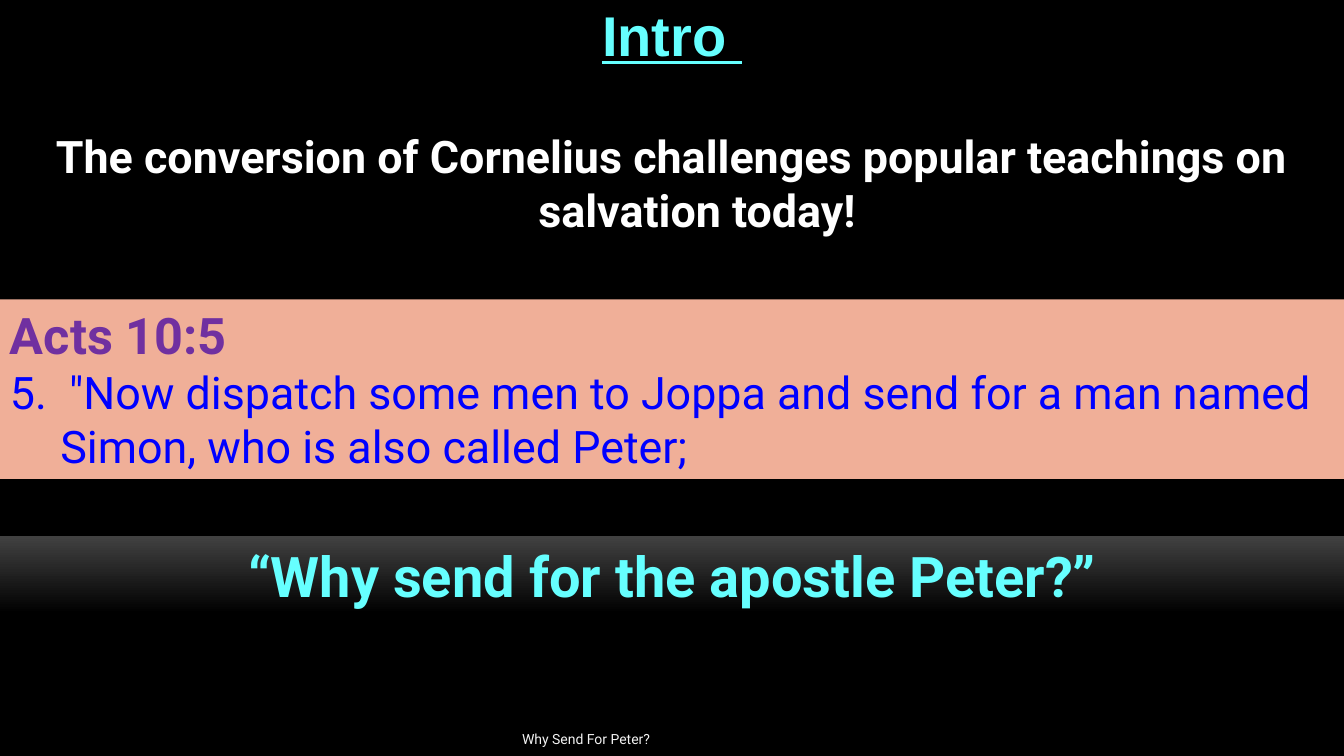
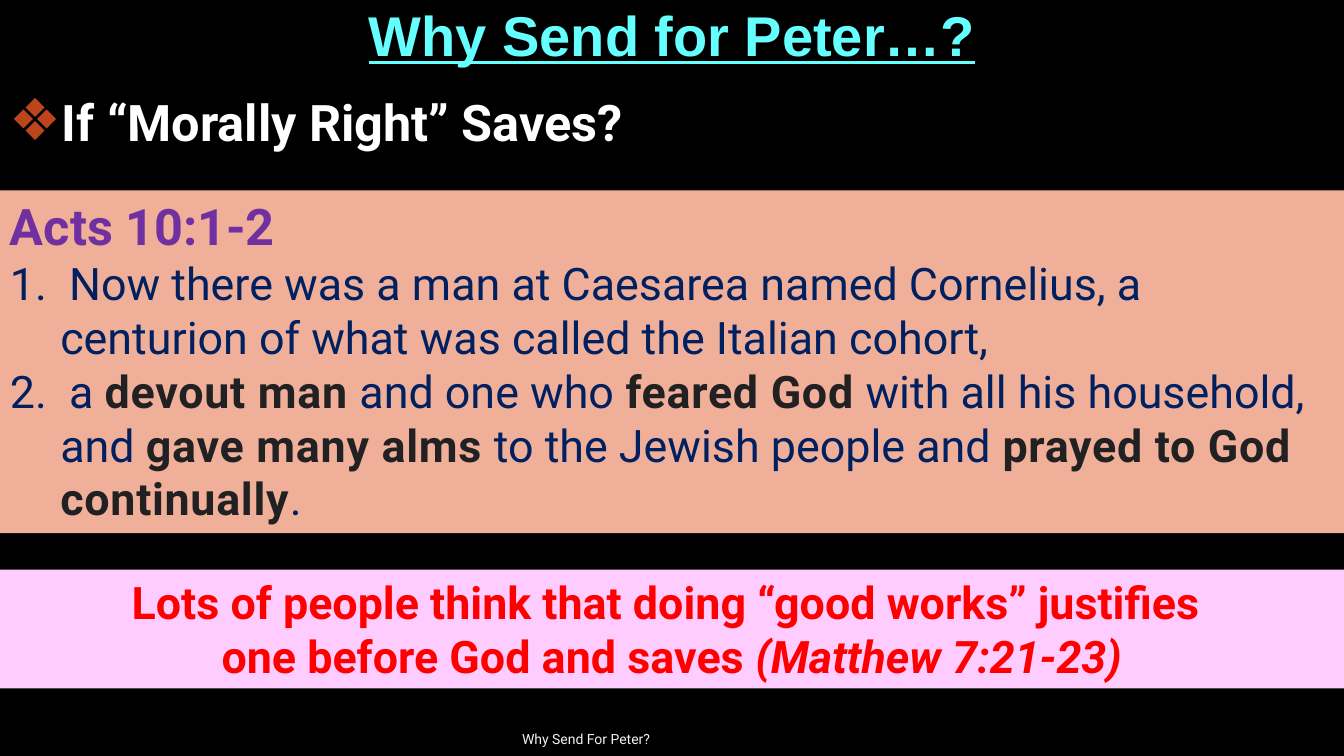
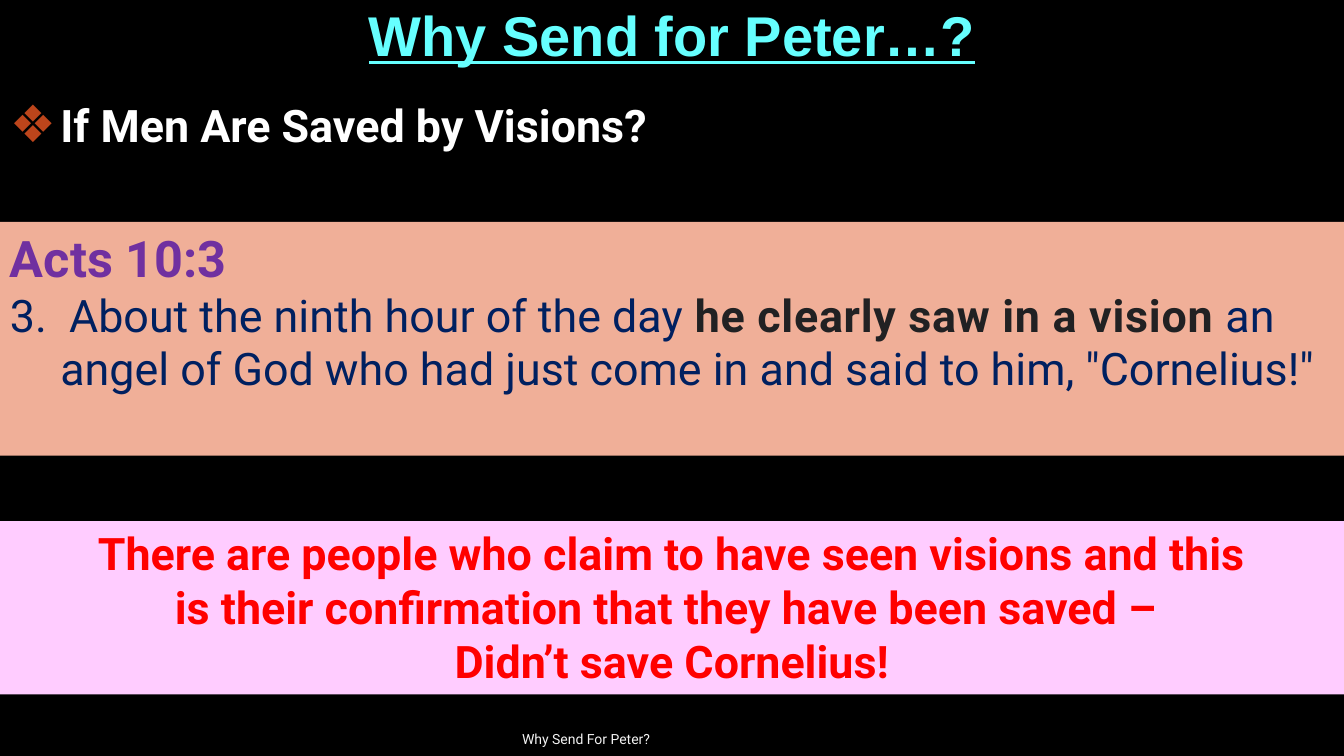
from lxml import etree
from pptx import Presentation
from pptx.dml.color import RGBColor
from pptx.enum.shapes import MSO_SHAPE
from pptx.enum.text import MSO_ANCHOR, PP_ALIGN
from pptx.oxml.ns import qn
from pptx.util import Inches, Pt

RECT = MSO_SHAPE.RECTANGLE
LEFT, CENTER = PP_ALIGN.LEFT, PP_ALIGN.CENTER
TOP, MIDDLE = MSO_ANCHOR.TOP, MSO_ANCHOR.MIDDLE

# Shared look
WIDTH, HEIGHT = 13.33, 7.5
HANG = 0.5
BLACK, WHITE, CYAN = "000000", "FFFFFF", "66FFFF"
GREY, SMOKE = "414141", "F2F2F2"
PEACH, PINK = "F0AF98", "FFCCFF"
PURPLE, BLUE, NAVY = "7030A0", "0000FF", "002060"
INK, RED, RUST = "212123", "FF0000", "BC451B"
TITLE = {"size": 40, "color": CYAN, "font": "Arial", "line": True}
FOOT = {"size": 10, "color": SMOKE, "bold": False}
POINT = {"size": 32, "color": WHITE}
BIG = {"size": 36, "color": WHITE}
ASK = {"size": 40, "color": CYAN}
CLAIM = {"size": 32, "color": RED}
CITE = {"size": 32, "color": RED, "slant": True}
HEAD = {"size": 36, "color": PURPLE}
QUOTE = {"size": 32, "color": BLUE, "bold": False}
VERSE = {"size": 32, "color": NAVY, "bold": False}
STRESS = {"size": 32, "color": INK, "gap": 0.5}


def rgb(code):
    return RGBColor.from_string(code)


# Text
def add_run(para, text, size, color, font="Roboto", bold=True,
            slant=False, line=False, gap=0):
    run = para.add_run()
    run.text = text
    face = run.font
    face.name, face.size = font, Pt(size)
    face.bold, face.italic, face.underline = bold, slant, line
    face.color.rgb = rgb(color)
    if gap:
        run._r.get_or_add_rPr().set("spc", str(int(gap * 100)))


def hang(para, mark=None):
    props = para._p.get_or_add_pPr()
    props.set("marL", str(Inches(HANG)))
    props.set("indent", str(-Inches(HANG)))
    if mark:
        tint = etree.SubElement(props, qn("a:buClr"))
        etree.SubElement(tint, qn("a:srgbClr"), val=RUST)
        etree.SubElement(props, qn("a:buSzPct"), val="115000")
        etree.SubElement(props, qn("a:buFont"), typeface="Arial")
        etree.SubElement(props, qn("a:buChar"), char=mark)


def write(shape, paras, align=LEFT, anchor=TOP, inset=True, mark=None):
    """Each paragraph is a list of (text, style) pairs."""
    frame = shape.text_frame
    frame.word_wrap = True
    frame.vertical_anchor = anchor
    for num, parts in enumerate(paras):
        para = frame.add_paragraph() if num else frame.paragraphs[0]
        para.alignment = align
        if inset:
            hang(para, mark)
        for text, style in parts:
            add_run(para, text, **style)


# Elements
def add_text(slide, left, top, width, height, paras, **opts):
    box = slide.shapes.add_textbox(*map(Inches, (left, top, width, height)))
    write(box, paras, **opts)


def add_band(slide, top, height, paras, color, fade=None, align=LEFT):
    band = slide.shapes.add_shape(
        RECT, 0, Inches(top), Inches(WIDTH), Inches(height))
    band.shadow.inherit = False
    band.line.fill.background()
    if fade:
        band.fill.gradient()
        band.fill.gradient_angle = 270
        for stop, code, pos in zip(band.fill.gradient_stops,
                                   (color, fade), (0, 1)):
            stop.color.rgb = rgb(code)
            stop.position = pos
    else:
        band.fill.solid()
        band.fill.fore_color.rgb = rgb(color)
    write(band, paras, align=align)


def add_verse(slide, top, height, ref, *verses):
    add_band(slide, top, height, [[(ref, HEAD)], *verses], PEACH)


def add_claim(slide, top, height, *lines):
    add_band(slide, top, height, lines, PINK, align=CENTER)


def add_point(slide, top, height, text, style):
    add_text(slide, 0, top, WIDTH, height, [[(text, style)]], mark="❖")


def add_page(deck, title):
    slide = deck.slides.add_slide(deck.slide_layouts[6])
    slide.background.fill.solid()
    slide.background.fill.fore_color.rgb = rgb(BLACK)
    add_text(slide, 0, 0, WIDTH, 0.67, [[(title, TITLE)]],
             align=CENTER, anchor=MIDDLE, inset=False)
    add_text(slide, 5.08, 7.17, 3.17, 0.33, [[("Why Send For Peter?", FOOT)]],
             anchor=MIDDLE, inset=False)
    return slide


# Slides
def add_intro(deck):
    slide = add_page(deck, "Intro ")
    add_text(slide, 0, 1.23, WIDTH, 1.18, [[(
        "The conversion of Cornelius challenges popular teachings on "
        "salvation today!", POINT)]], align=CENTER)
    add_band(slide, 5.32, 0.77, [[("“Why send for the apostle Peter?”", ASK)]],
             GREY, fade=BLACK, align=CENTER)
    add_verse(slide, 2.97, 1.78, "Acts 10:5", [(
        "5.  \"Now dispatch some men to Joppa and send for a man named "
        "Simon, who is also called Peter;", QUOTE)])


def add_moral(deck):
    slide = add_page(deck, "Why Send for Peter…?")
    add_point(slide, 0.85, 0.71, "If “Morally Right” Saves?", BIG)
    add_verse(
        slide, 1.89, 3.4, "Acts 10:1-2",
        [("1.  Now there was a man at Caesarea named Cornelius, a "
          "centurion of what was called the Italian cohort,", VERSE)],
        [("2.  a ", VERSE), ("devout man", STRESS),
         (" and one who ", VERSE), ("feared God", STRESS),
         (" with all his household, and ", VERSE),
         ("gave many alms", STRESS),
         (" to the Jewish people and ", VERSE),
         ("prayed to God continually", STRESS), (".", VERSE)])
    add_claim(
        slide, 5.65, 1.18,
        [("Lots of people think that doing “good works” justifies ", CLAIM)],
        [("one before God and saves ", CLAIM), ("(Matthew 7:21-23)", CITE)])


def add_vision(deck):
    slide = add_page(deck, "Why Send for Peter…?")
    add_point(slide, 0.92, 0.64, "If Men Are Saved by Visions?", POINT)
    add_verse(
        slide, 2.2, 2.32, "Acts 10:3",
        [("3.  About the ninth hour of the day ", VERSE),
         ("he clearly saw in a vision", STRESS),
         (" an angel of God who had just come in and said to him, "
          "\"Cornelius!\"", VERSE)])
    add_claim(
        slide, 5.17, 1.72,
        [("There are people who claim to have seen visions and this", CLAIM)],
        [("is their confirmation that they have been saved – ", CLAIM)],
        [("Didn’t save Cornelius!", CLAIM)])


def main():
    deck = Presentation()
    deck.slide_width, deck.slide_height = Inches(WIDTH), Inches(HEIGHT)
    add_intro(deck)
    add_moral(deck)
    add_vision(deck)
    deck.save("out.pptx")


if __name__ == "__main__":
    main()
